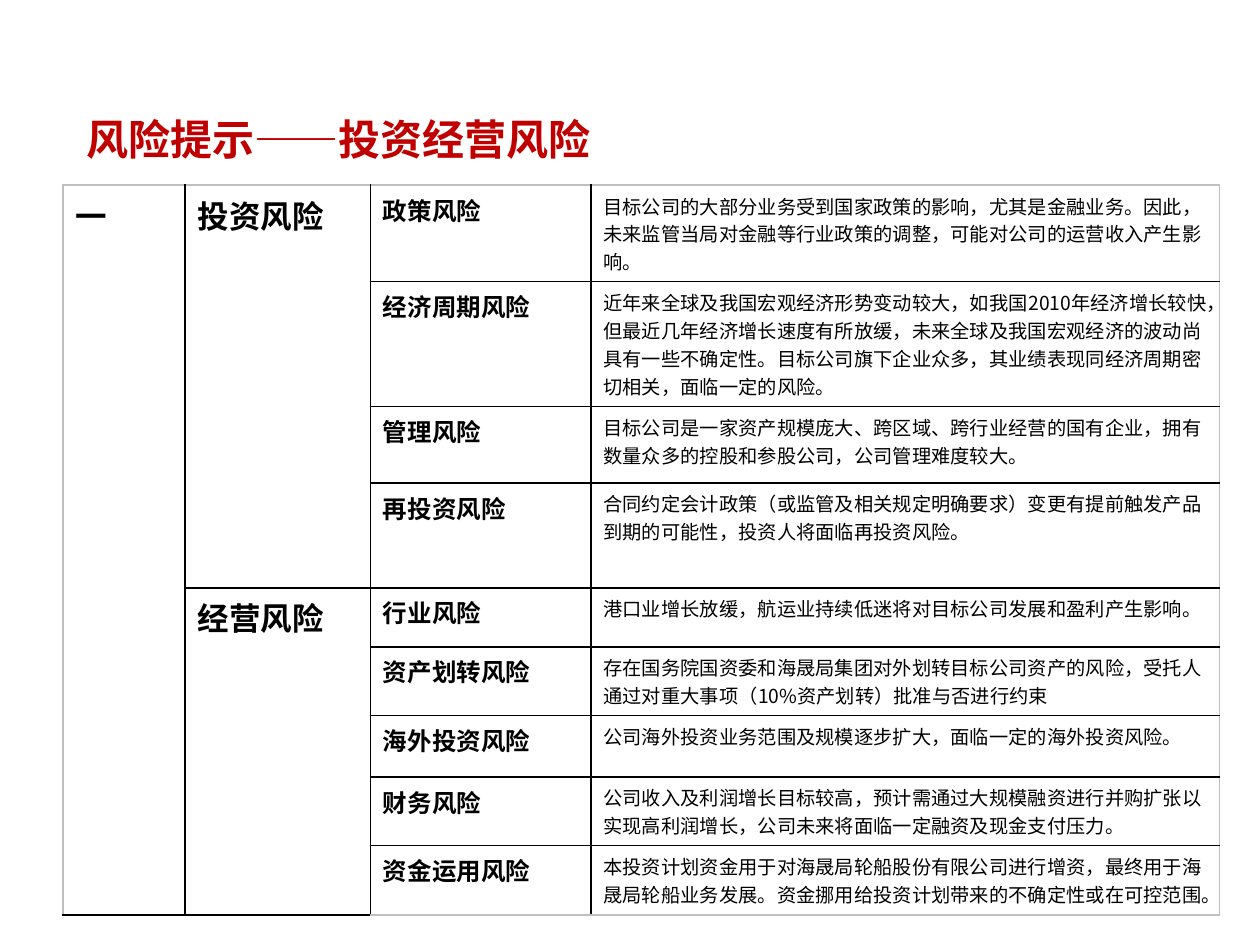
from lxml import etree
from pptx import Presentation
from pptx import util as u
from pptx.dml import color
from pptx.enum import text
from pptx.oxml import ns

COLORS = {"title": "C00000", "ink": "000000", "frame": "BFBFBF"}
FONT = "Noto Sans CJK SC"
GRID_COLUMNS, GRID_ROWS = 100, 75
COLUMN_WIDTHS = [9.7, 14.7, 17.5, 49.9]
SECTION = "一"
RISKS = {
    "投资风险": [
        ("政策风险", 7.6, "目标公司的大部分业务受到国家政策的影响，尤其是金融业务。因此，"
         "未来监管当局对金融等行业政策的调整，可能对公司的运营收入产生影响。"),
        ("经济周期风险", 9.9, "近年来全球及我国宏观经济形势变动较大，如我国2010年经济增长较快，"
         "但最近几年经济增长速度有所放缓，未来全球及我国宏观经济的波动尚具有一些不确定性。"
         "目标公司旗下企业众多，其业绩表现同经济周期密切相关，面临一定的风险。"),
        ("管理风险", 6.1, "目标公司是一家资产规模庞大、跨区域、跨行业经营的国有企业，"
         "拥有数量众多的控股和参股公司，公司管理难度较大。"),
        ("再投资风险", 8.3, "合同约定会计政策（或监管及相关规定明确要求）变更有提前触发产品"
         "到期的可能性，投资人将面临再投资风险。"),
    ],
    "经营风险": [
        ("行业风险", 4.7, "港口业增长放缓，航运业持续低迷将对目标公司发展和盈利产生影响。"),
        ("资产划转风险", 5.4, "存在国务院国资委和海晟局集团对外划转目标公司资产的风险，"
         "受托人通过对重大事项（10%资产划转）批准与否进行约束"),
        ("海外投资风险", 4.9, "公司海外投资业务范围及规模逐步扩大，面临一定的海外投资风险。"),
        ("财务风险", 5.4, "公司收入及利润增长目标较高，预计需通过大规模融资进行并购扩张以"
         "实现高利润增长，公司未来将面临一定融资及现金支付压力。"),
        ("资金运用风险", 5.5, "本投资计划资金用于对海晟局轮船股份有限公司进行增资，最终用于"
         "海晟局轮船业务发展。资金挪用给投资计划带来的不确定性或在可控范围。"),
    ],
}


class RiskSlide:
    """Holds the style and the current slide, measured on a 100 by 75 grid."""

    def __init__(self, presentation):
        self.cell_width = presentation.slide_width / GRID_COLUMNS
        self.cell_height = presentation.slide_height / GRID_ROWS
        self.slide = presentation.slides.add_slide(presentation.slide_layouts[5])

    def across(self, columns):
        return u.Emu(round(columns * self.cell_width))

    def down(self, rows):
        return u.Emu(round(rows * self.cell_height))

    def label(self, frame, words, size, bold=True, ink="ink"):
        frame.text = words
        paragraph = frame.paragraphs[0]
        paragraph.alignment = text.PP_ALIGN.LEFT
        font = paragraph.font
        font.size, font.bold, font.name = u.Pt(size), bold, FONT
        font.color.rgb = color.RGBColor.from_string(COLORS[ink])
        properties = paragraph._p.pPr.find(ns.qn("a:defRPr"))
        etree.SubElement(properties, ns.qn("a:ea"), typeface=FONT)
        return paragraph

    def title(self, words, left, top, width, height):
        shape = self.slide.shapes.title
        shape.left, shape.top = self.across(left), self.down(top)
        shape.width, shape.height = self.across(width), self.down(height)
        frame = shape.text_frame
        frame.word_wrap = False
        frame.auto_size = text.MSO_AUTO_SIZE.NONE
        frame.vertical_anchor = text.MSO_ANCHOR.MIDDLE
        self.label(frame, words, 24, ink="title").space_before = u.Pt(10)

    def border(self, cell, edge, ink):
        properties = cell._tc.get_or_add_tcPr()
        line = etree.SubElement(properties, ns.qn(f"a:ln{edge}"), w=str(u.Pt(1)))
        fill = etree.SubElement(line, ns.qn("a:solidFill"))
        etree.SubElement(fill, ns.qn("a:srgbClr"), val=COLORS[ink])

    def table(self, left, top, widths, heights):
        table = self.slide.shapes.add_table(
            len(heights), len(widths), self.across(left), self.down(top),
            self.across(sum(widths)), self.down(sum(heights))).table
        table.first_row = table.horz_banding = False
        for column, width in zip(table.columns, widths):
            column.width = self.across(width)
        for row, height in zip(table.rows, heights):
            row.height = self.down(height)
        last_row, last_column = len(heights) - 1, len(widths) - 1
        for i in range(len(heights)):
            for j in range(len(widths)):
                cell = table.cell(i, j)
                outer = {"L": j == 0, "R": j == last_column,
                         "T": i == 0, "B": i == last_row}
                for edge, is_outer in outer.items():
                    self.border(cell, edge, "frame" if is_outer else "ink")
                cell.fill.background()
        return table

    def risk_table(self, left, top):
        heights = [height for risks in RISKS.values() for _, height, _ in risks]
        table = self.table(left, top, COLUMN_WIDTHS, heights)
        table.cell(0, 0).merge(table.cell(len(heights) - 1, 0))
        self.label(table.cell(0, 0).text_frame, SECTION, 18)
        row = 0
        for group, risks in RISKS.items():
            table.cell(row, 1).merge(table.cell(row + len(risks) - 1, 1))
            self.label(table.cell(row, 1).text_frame, group, 18)
            for name, _, description in risks:
                self.label(table.cell(row, 2).text_frame, name, 14)
                self.label(table.cell(row, 3).text_frame, description, 11, bold=False)
                row += 1


def main():
    presentation = Presentation()
    presentation.slide_width, presentation.slide_height = u.Inches(10), u.Inches(7.5)
    slide = RiskSlide(presentation)
    slide.title("风险提示——投资经营风险", 5.9, 8.7, 42.4, 4.6)
    slide.risk_table(5, 14.7)
    presentation.save("out.pptx")


if __name__ == "__main__":
    main()
